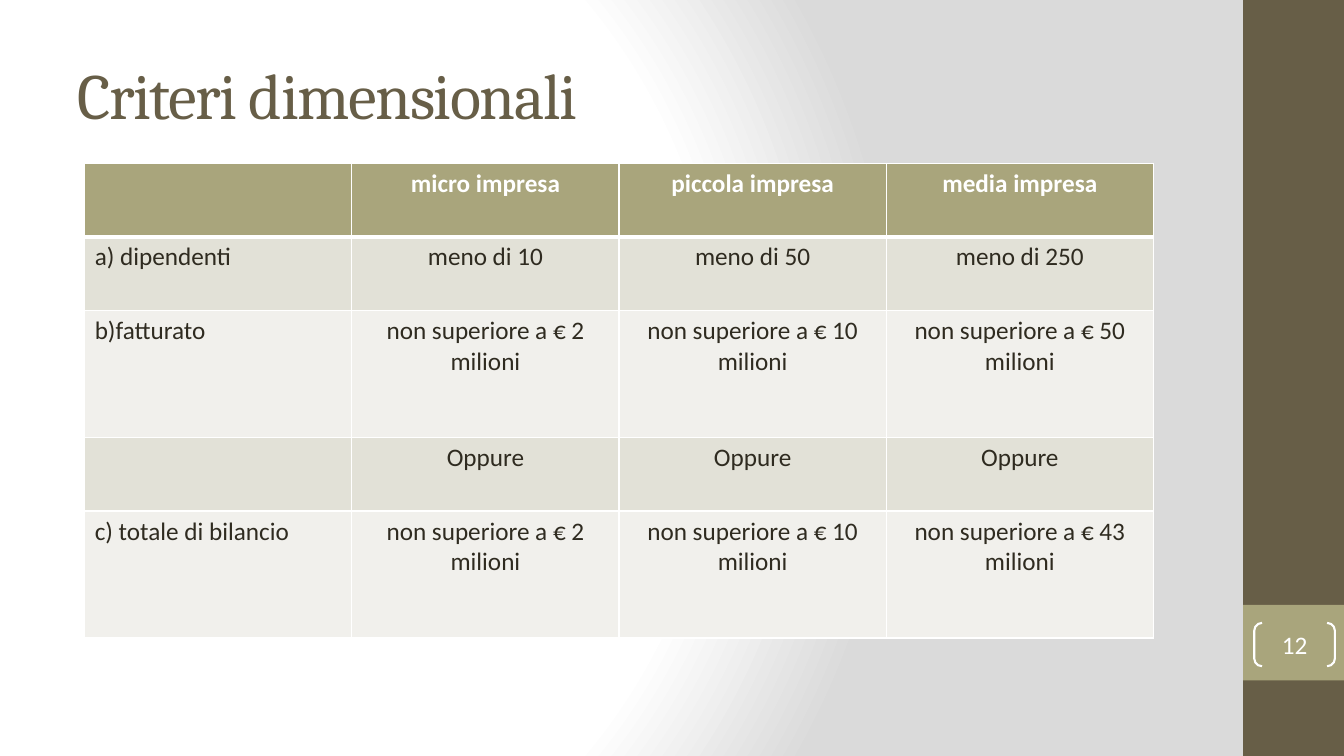
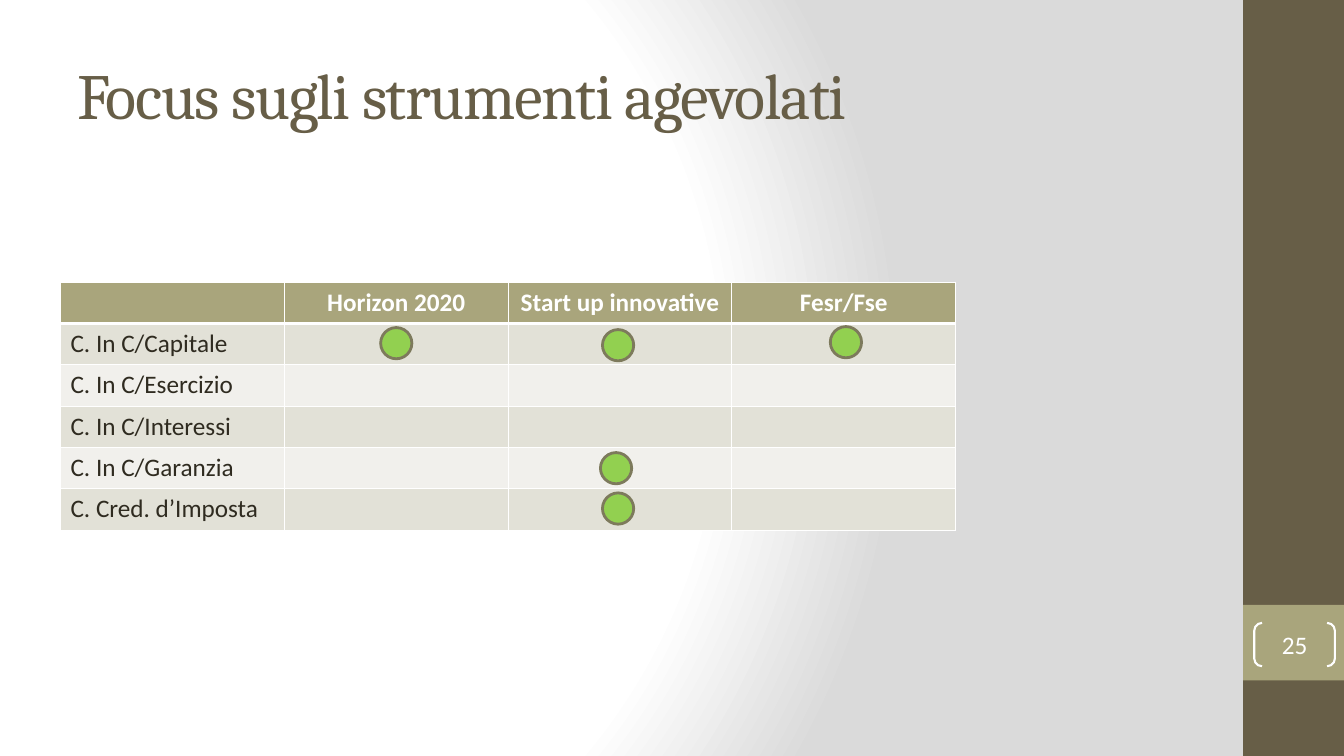
from pptx import Presentation
from pptx.dml.color import RGBColor
from pptx.enum.shapes import MSO_SHAPE as SHAPE
from pptx.enum.text import MSO_ANCHOR as ANCHOR, PP_ALIGN as ALIGN
from pptx.oxml import parse_xml
from pptx.oxml.ns import nsdecls, qn
from pptx.util import Inches, Pt

WHITE = RGBColor(0xFF, 0xFF, 0xFF)
SILVER = RGBColor(0xDA, 0xDA, 0xDA)
BROWN = RGBColor(0x67, 0x5E, 0x47)
OLIVE = RGBColor(0xA9, 0xA5, 0x7C)
INK = RGBColor(0x2F, 0x2B, 0x20)
DARK = RGBColor(0xE2, 0xE1, 0xD7)
PALE = RGBColor(0xF1, 0xF0, 0xEC)
GREEN = RGBColor(0x92, 0xD0, 0x50)
RING = RGBColor(0x7D, 0x7A, 0x5C)

WIDE, HIGH = 13.33, 7.5
RAIL = WIDE - 1
DOT = 0.31

PAGES = [
    {
        "title": "Criteri dimensionali",
        "page": 12,
        "left": 0.84, "top": 1.62, "col": 2.65,
        "rows": [0.73, 0.73, 1.26, 0.73, 1.26],
        "cells": [
            ["", "micro impresa", "piccola impresa", "media impresa"],
            ["a) dipendenti", "meno di 10", "meno di 50", "meno di 250"],
            ["b)fatturato", "non superiore a € 2 milioni",
             "non superiore a € 10 milioni", "non superiore a € 50 milioni"],
            ["", "Oppure", "Oppure", "Oppure"],
            ["c) totale di bilancio", "non superiore a € 2 milioni",
             "non superiore a € 10 milioni", "non superiore a € 43 milioni"],
        ],
        "dots": [],
    },
    {
        "title": "Focus sugli strumenti agevolati",
        "page": 25,
        "left": 0.6, "top": 2.8, "col": 2.22,
        "rows": [0.41] * 6,
        "cells": [
            ["", "Horizon 2020", "Start up innovative", "Fesr/Fse"],
            ["C. In C/Capitale", "", "", ""],
            ["C. In C/Esercizio", "", "", ""],
            ["C. In C/Interessi", "", "", ""],
            ["C. In C/Garanzia", "", "", ""],
            ["C. Cred. d’Imposta", "", "", ""],
        ],
        # column, row, shift right, shift down
        "dots": [(1, 1, 0, -0.01), (2, 1, -0.02, 0.01), (3, 1, 0.02, -0.02),
                 (2, 4, -0.04, 0), (2, 5, -0.02, -0.01)],
    },
]


def write(frame, text, size=18, face="Calibri", color=INK, bold=False,
          align=ALIGN.LEFT, track=0):
    """Fill a text frame with one line; track is letter spacing in points."""
    para = frame.paragraphs[0]
    para.alignment = align
    run = para.add_run()
    run.text = text
    font = run.font
    font.size, font.name, font.bold = Pt(size), face, bold
    font.color.rgb = color
    if track:
        run._r.get_or_add_rPr().set("spc", str(track * 100))


def draw(slide, kind, x, y, w, h, fill=None, line=None, width=1):
    shape = slide.shapes.add_shape(
        kind, Inches(x), Inches(y), Inches(w), Inches(h))
    shape.shadow.inherit = False
    if fill is None:
        shape.fill.background()
    else:
        shape.fill.solid()
        shape.fill.fore_color.rgb = fill
    if line is None:
        shape.line.fill.background()
    else:
        shape.line.color.rgb = line
        shape.line.width = Pt(width)
    return shape


deck = Presentation()
deck.slide_width, deck.slide_height = Inches(WIDE), Inches(HIGH)

# Radial backdrop, set once on the master
master = deck.slide_master
master.background.fill.gradient()
old = master.element.cSld.find(".//" + qn("a:gradFill"))
stops = "".join(
    f'<a:gs pos="{pos * 1000}"><a:srgbClr val="{tone}"/></a:gs>'
    for pos, tone in [(0, WHITE), (75, WHITE), (100, SILVER)])
old.getparent().replace(old, parse_xml(
    f'<a:gradFill {nsdecls("a")} rotWithShape="1"><a:gsLst>{stops}</a:gsLst>'
    '<a:path path="circle"><a:fillToRect l="20000" t="50000" r="100000" '
    'b="50000"/></a:path></a:gradFill>'))

for page in PAGES:
    slide = deck.slides.add_slide(deck.slide_layouts[6])
    draw(slide, SHAPE.RECTANGLE, RAIL, 0, 1, HIGH, BROWN)
    draw(slide, SHAPE.RECTANGLE, RAIL, HIGH * 0.8, 1, HIGH * 0.1, OLIVE)

    title = slide.shapes.add_textbox(
        Inches(WIDE * 0.05), Inches(HIGH * 0.04), Inches(11.11), Inches(1.25))
    title.text_frame.word_wrap = True
    title.text_frame.vertical_anchor = ANCHOR.MIDDLE
    write(title.text_frame, page["title"], size=46, face="Cambria",
          color=BROWN, track=-1)

    left, top, col = page["left"], page["top"], page["col"]
    rows, cells = page["rows"], page["cells"]
    count = len(cells[0])
    table = slide.shapes.add_table(
        len(rows), count, Inches(left), Inches(top),
        Inches(col * count), Inches(sum(rows))).table
    for column in table.columns:
        column.width = Inches(col)
    for r, line in enumerate(cells):
        table.rows[r].height = Inches(rows[r])
        head = r == 0
        for c, text in enumerate(line):
            cell = table.cell(r, c)
            props = cell._tc.get_or_add_tcPr()
            for side in "LRTB":
                thick = (r, side) in [(0, "B"), (1, "T")]
                props.append(parse_xml(
                    f'<a:ln{side} {nsdecls("a")} w="{Pt(3 if thick else 1)}">'
                    f'<a:solidFill><a:srgbClr val="{WHITE}"/></a:solidFill>'
                    f'</a:ln{side}>'))
            cell.fill.solid()
            cell.fill.fore_color.rgb = OLIVE if head else DARK if r % 2 else PALE
            if text:
                write(cell.text_frame, text, color=WHITE if head else INK,
                      bold=head, align=ALIGN.CENTER if c else ALIGN.LEFT)

    for c, r, dx, dy in page["dots"]:
        x = left + col * (c + 0.5) - DOT / 2 + dx
        y = top + sum(rows[:r]) + rows[r] / 2 - DOT / 2 + dy
        draw(slide, SHAPE.OVAL, x, y, DOT, DOT, GREEN, RING, 2)

    badge = draw(slide, SHAPE.DOUBLE_BRACKET, RAIL + 0.11, 6.18, 0.8, 0.43,
                 line=WHITE, width=1.5)
    badge.adjustments[0] = 0.18
    frame = badge.text_frame
    frame.margin_left = frame.margin_right = 0
    frame.margin_top = frame.margin_bottom = 0
    frame.vertical_anchor = ANCHOR.MIDDLE
    write(frame, str(page["page"]), color=WHITE, align=ALIGN.CENTER)

deck.save("out.pptx")
